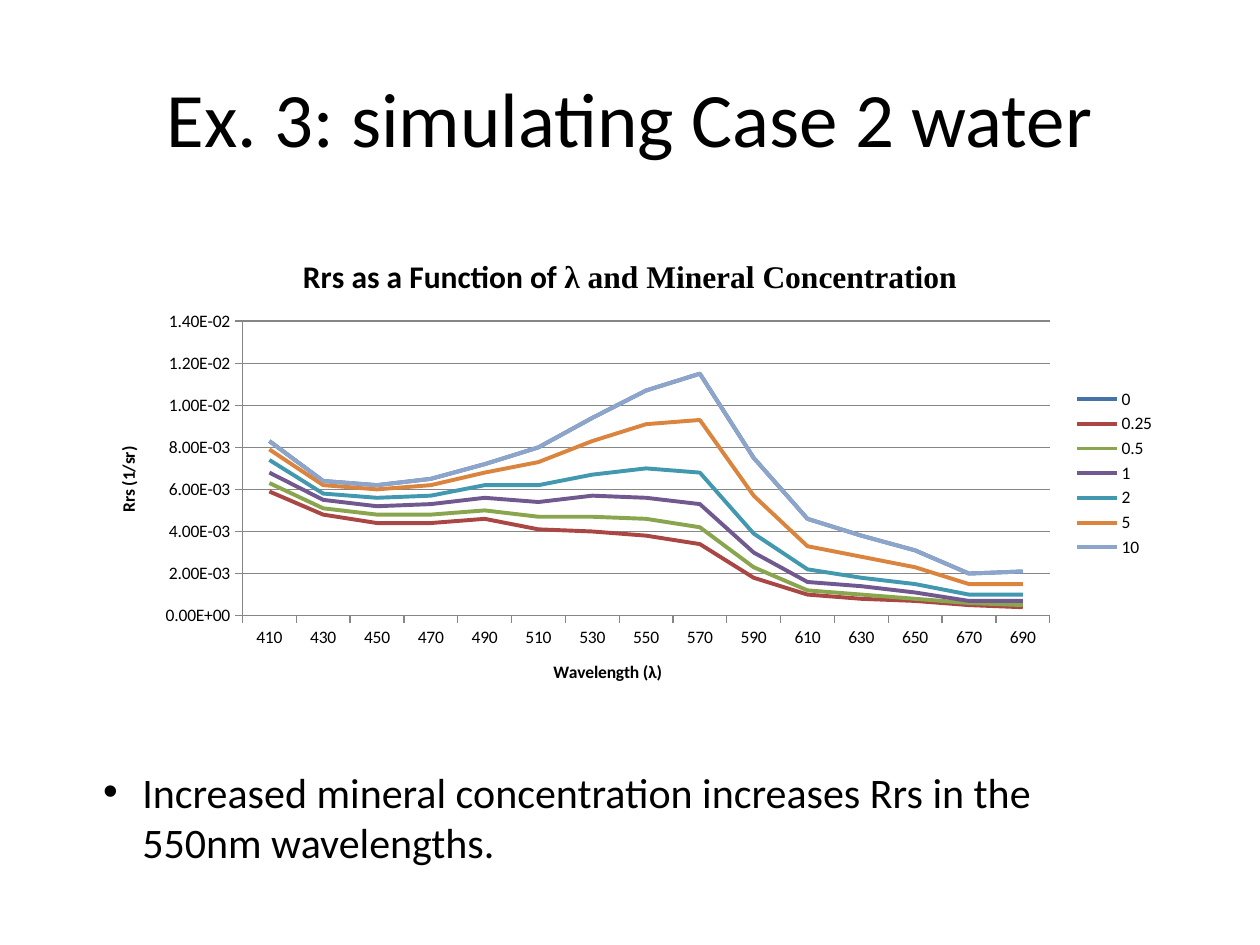
from lxml import etree
from pptx import Presentation
from pptx.chart.data import CategoryChartData
from pptx.dml.color import RGBColor
from pptx.enum.chart import XL_CHART_TYPE, XL_LEGEND_POSITION, XL_TICK_MARK
from pptx.enum.text import MSO_ANCHOR, PP_ALIGN
from pptx.oxml import parse_xml
from pptx.oxml.ns import nsdecls, qn
from pptx.util import Cm, Pt

LINE_CHART = XL_CHART_TYPE.LINE
LEGEND_RIGHT = XL_LEGEND_POSITION.RIGHT
TICK_OUTSIDE = XL_TICK_MARK.OUTSIDE
MIDDLE = MSO_ANCHOR.MIDDLE
TOP = MSO_ANCHOR.TOP
LEFT = PP_ALIGN.LEFT
CENTER = PP_ALIGN.CENTER

BLACK = RGBColor(0x00, 0x00, 0x00)
GRAY = RGBColor(0x86, 0x86, 0x86)
BLUE = RGBColor(0x45, 0x72, 0xA7)
RED = RGBColor(0xAA, 0x46, 0x43)
GREEN = RGBColor(0x89, 0xA5, 0x4E)
PURPLE = RGBColor(0x71, 0x58, 0x8F)
TEAL = RGBColor(0x41, 0x98, 0xAF)
ORANGE = RGBColor(0xDB, 0x84, 0x3D)
LIGHT_BLUE = RGBColor(0x8E, 0xA5, 0xCB)

FONT = "Calibri"
SERIF_FONT = "Times New Roman"

# Reflectance in units of 1E-4 per sr, by mineral concentration
WAVELENGTHS = [str(length) for length in range(410, 691, 20)]
HIGHEST = [83, 64, 62, 65, 72, 80, 94, 107, 115, 75, 46, 38, 31, 20, 21]
CONCENTRATIONS = [
    ("0", BLUE, HIGHEST),
    ("0.25", RED, [59, 48, 44, 44, 46, 41, 40, 38, 34, 18, 10, 8, 7, 5, 4]),
    ("0.5", GREEN, [63, 51, 48, 48, 50, 47, 47, 46, 42, 23, 12, 10, 8, 6, 5]),
    ("1", PURPLE, [68, 55, 52, 53, 56, 54, 57, 56, 53, 30, 16, 14, 11, 7, 7]),
    ("2", TEAL, [74, 58, 56, 57, 62, 62, 67, 70, 68, 39, 22, 18, 15, 10, 10]),
    ("5", ORANGE, [79, 62, 60, 62, 68, 73, 83, 91, 93, 57, 33, 28, 23, 15, 15]),
    ("10", LIGHT_BLUE, HIGHEST),
]


def style_font(font, size, bold=False, name=FONT):
    font.name = name
    font.size = Pt(size)
    font.bold = bold
    font.color.rgb = BLACK


def add_run(para, text, size, bold=False, name=FONT):
    span = para.add_run()
    span.text = text
    style_font(span.font, size, bold, name)


def add_text(page, left, top, width, height, text, size, align, anchor):
    box = page.shapes.add_textbox(left, top, width, height)
    frame = box.text_frame
    frame.word_wrap = True
    frame.vertical_anchor = anchor
    para = frame.paragraphs[0]
    para.alignment = align
    add_run(para, text, size)
    return para


def add_bullet(para, indent):
    properties = para._p.get_or_add_pPr()
    properties.set("marL", str(indent))
    properties.set("indent", str(-indent))
    font = etree.SubElement(properties, qn("a:buFont"))
    font.set("typeface", "Arial")
    etree.SubElement(properties, qn("a:buChar")).set("char", "•")


def style_axis(axis, title):
    axis.major_tick_mark = TICK_OUTSIDE
    axis.format.line.color.rgb = GRAY
    style_font(axis.tick_labels.font, 10)
    add_run(axis.axis_title.text_frame.paragraphs[0], title, 10, bold=True)


def place_plot(chart, x, y, width, height):
    area = chart._chartSpace.chart.plotArea
    for layout in area.findall(qn("c:layout")):
        area.remove(layout)
    sizes = "".join(f'<c:{tag} val="{value}"/>' for tag, value in
                    (("x", x), ("y", y), ("w", width), ("h", height)))
    area.insert(0, parse_xml(
        f'<c:layout {nsdecls("c")}><c:manualLayout><c:layoutTarget val="inner"/>'
        f'<c:xMode val="edge"/><c:yMode val="edge"/>{sizes}'
        '</c:manualLayout></c:layout>'))


def add_line_chart(page, left, top, width, height):
    data = CategoryChartData(number_format="0.00E+00")
    data.categories = WAVELENGTHS
    for name, _, values in CONCENTRATIONS:
        data.add_series(name, [value / 10000 for value in values])
    chart = page.shapes.add_chart(LINE_CHART, left, top, width, height, data).chart
    style_font(chart.font, 10)

    # Title in two fonts
    para = chart.chart_title.text_frame.paragraphs[0]
    add_run(para, "Rrs as a Function of ", 18, bold=True)
    add_run(para, "λ and Mineral Concentration", 18, bold=True, name=SERIF_FONT)
    chart.chart_title.include_in_layout = False

    # Axes and gridlines
    style_axis(chart.category_axis, "Wavelength (λ)")
    value_axis = chart.value_axis
    style_axis(value_axis, "Rrs (1/sr)")
    value_axis.minimum_scale = 0
    value_axis.maximum_scale = 0.014
    value_axis.major_unit = 0.002
    value_axis.tick_labels.number_format = "0.00E+00"
    value_axis.tick_labels.number_format_is_linked = False
    value_axis.has_major_gridlines = True
    value_axis.major_gridlines.format.line.color.rgb = GRAY

    # Legend
    chart.has_legend = True
    chart.legend.position = LEGEND_RIGHT
    chart.legend.include_in_layout = False
    style_font(chart.legend.font, 10)

    # Lines
    plot = chart.plots[0]
    plot.vary_by_categories = False
    for series, (_, color, _) in zip(plot.series, CONCENTRATIONS):
        series.smooth = False
        series.format.line.color.rgb = color
        series.format.line.width = Pt(2.25)
    place_plot(chart, 0.14, 0.18, 0.75, 0.62)


def main():
    deck = Presentation()
    deck.slide_width = Cm(25.4)
    deck.slide_height = Cm(19.05)
    page = deck.slides.add_slide(deck.slide_layouts[6])

    # Heading
    add_text(page, Cm(1.27), Cm(0.76), Cm(22.86), Cm(3.18),
             "Ex. 3: simulating Case 2 water", 44, CENTER, MIDDLE)

    # Chart
    add_line_chart(page, Cm(1.85), Cm(4.75), Cm(21.7), Cm(9.58))

    # Finding
    finding = add_text(
        page, Cm(1.83), Cm(15.32), Cm(21.72), Cm(2.31),
        "Increased mineral concentration increases Rrs in the 550nm wavelengths.",
        24, LEFT, TOP)
    add_bullet(finding, Cm(0.79))

    deck.save("out.pptx")


if __name__ == "__main__":
    main()
